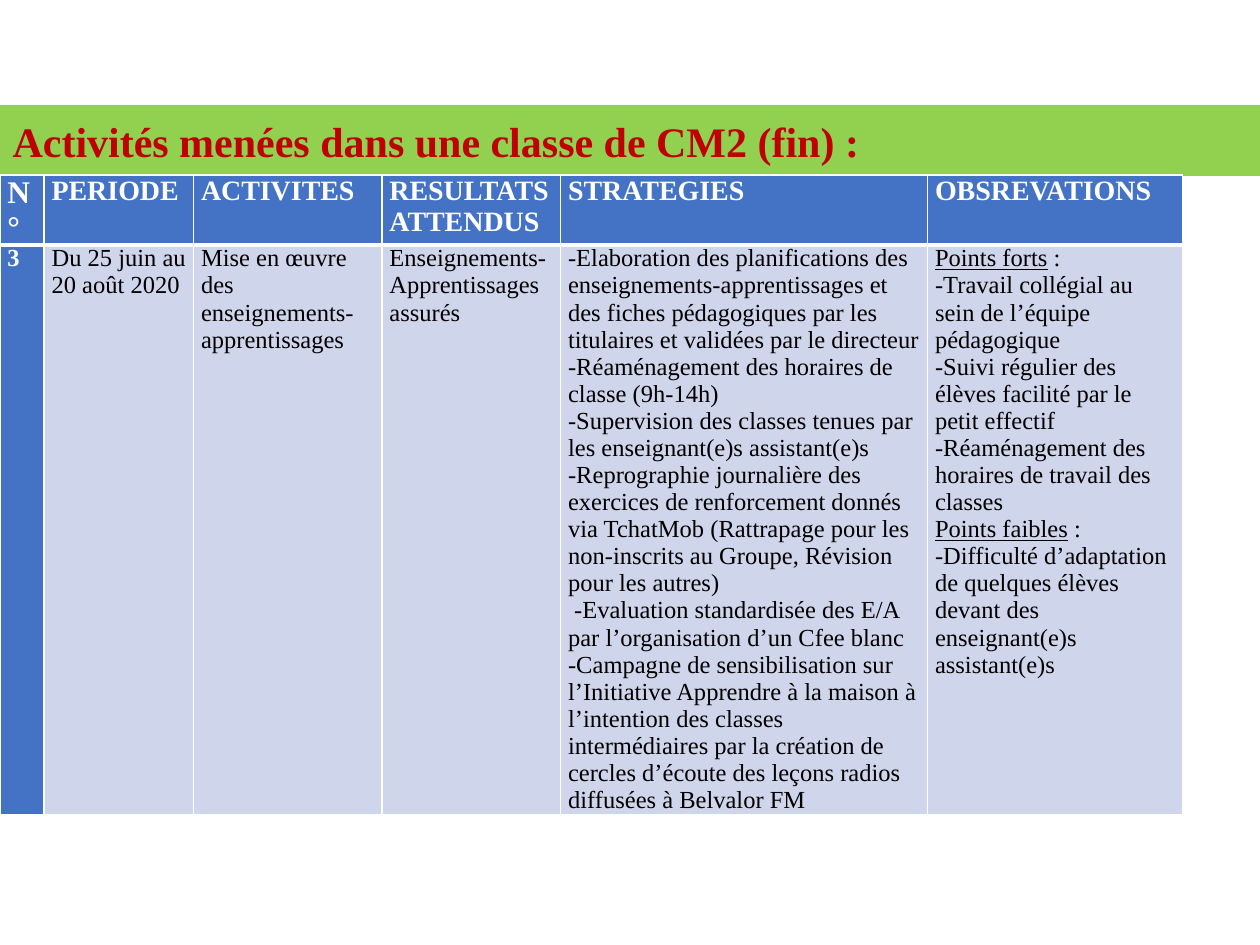
from lxml.etree import SubElement
from pptx import Presentation
from pptx.dml.color import RGBColor
from pptx.enum.text import MSO_ANCHOR, MSO_AUTO_SIZE, PP_ALIGN
from pptx.oxml.ns import qn
from pptx.util import Pt

FONT = "Times New Roman"
GREEN = RGBColor(0x92, 0xD0, 0x50)
RED = RGBColor(0xC0, 0x00, 0x00)
BLUE = RGBColor(0x44, 0x72, 0xC4)
PALE = RGBColor(0xCF, 0xD5, 0xEA)
WHITE = RGBColor(0xFF, 0xFF, 0xFF)
BLACK = RGBColor(0x00, 0x00, 0x00)

COLUMNS = [25.2, 85.4, 107.7, 102.1, 209.7, 145.7]
ROWS = [40, 325.5]
HEADERS = ["N°", "PERIODE", "ACTIVITES", "RESULTATS ATTENDUS", "STRATEGIES", "OBSREVATIONS"]
STRATEGIES = [
    "-Elaboration des planifications des enseignements-apprentissages et des fiches "
    "pédagogiques par les titulaires et validées par le directeur",
    "-Réaménagement des horaires de classe (9h-14h)",
    "-Supervision des classes tenues par les enseignant(e)s assistant(e)s",
    "-Reprographie journalière des exercices de renforcement donnés via TchatMob "
    "(Rattrapage pour les non-inscrits au Groupe, Révision pour les autres)",
    " -Evaluation standardisée des E/A par l’organisation d’un Cfee blanc",
    "-Campagne de sensibilisation sur l’Initiative Apprendre à la maison à l’intention "
    "des classes intermédiaires par la création de cercles d’écoute des leçons radios "
    "diffusées à Belvalor FM",
]
# A tuple holds an underlined label and the plain text after it.
OBSERVATIONS = [
    ("Points forts", " :"),
    "-Travail collégial au sein de l’équipe pédagogique",
    "-Suivi régulier des élèves facilité par le petit effectif",
    "-Réaménagement des horaires de travail des classes",
    ("Points faibles", " :"),
    "-Difficulté d’adaptation de quelques élèves devant des enseignant(e)s assistant(e)s",
]
ACTIVITY = [
    ["3"],
    ["Du 25 juin au 20 août 2020"],
    ["Mise en œuvre des enseignements-apprentissages"],
    ["Enseignements-Apprentissages assurés"],
    STRATEGIES,
    OBSERVATIONS,
]


def add_run(p, text, size, color, bold=False, underline=None):
    r = p.add_run()
    r.text = text
    r.font.name = FONT
    r.font.size = Pt(size)
    r.font.bold = bold
    r.font.underline = underline
    r.font.color.rgb = color


def add_title(s, left, top, width, height):
    sp = s.shapes.title
    sp.left, sp.top, sp.width, sp.height = Pt(left), Pt(top), Pt(width), Pt(height)
    sp.fill.solid()
    sp.fill.fore_color.rgb = GREEN
    sp.line.color.rgb = GREEN
    sp.line.width = Pt(1)
    tf = sp.text_frame
    tf.word_wrap = True
    tf.auto_size = MSO_AUTO_SIZE.NONE
    tf.vertical_anchor = MSO_ANCHOR.MIDDLE
    p = tf.paragraphs[0]
    p.alignment = PP_ALIGN.LEFT
    add_run(p, "Activités menées dans une classe de CM2 (fin) :", 24, RED, bold=True)


def set_borders(cell, top, bottom):
    tc_pr = cell._tc.get_or_add_tcPr()
    for side, width in (("L", 1), ("R", 1), ("T", top), ("B", bottom)):
        ln = SubElement(tc_pr, qn(f"a:ln{side}"), w=str(Pt(width)))
        fill = SubElement(ln, qn("a:solidFill"))
        SubElement(fill, qn("a:srgbClr"), val=str(WHITE))


def fill_cell(cell, paragraphs, size, heading, is_header):
    cell.margin_left = cell.margin_right = Pt(4.3)
    cell.margin_top = cell.margin_bottom = 0
    set_borders(cell, *((1, 3) if is_header else (3, 1)))
    cell.fill.solid()
    cell.fill.fore_color.rgb = BLUE if heading else PALE
    color = WHITE if heading else BLACK
    tf = cell.text_frame
    for i, content in enumerate(paragraphs):
        p = tf.add_paragraph() if i else tf.paragraphs[0]
        if isinstance(content, tuple):
            label, rest = content
            add_run(p, label, size, color, heading, underline=True)
            add_run(p, rest, size, color, heading)
        else:
            add_run(p, content, size, color, heading)


def add_activity_table(s, left, top):
    frame = s.shapes.add_table(len(ROWS), len(COLUMNS), Pt(left), Pt(top),
                               Pt(sum(COLUMNS)), Pt(sum(ROWS)))
    table = frame.table
    for column, width in zip(table.columns, COLUMNS):
        column.width = Pt(width)
    for row, height in zip(table.rows, ROWS):
        row.height = Pt(height)
    for i, (header, content) in enumerate(zip(HEADERS, ACTIVITY)):
        fill_cell(table.cell(0, i), [header], 16 if i else 18, True, True)
        fill_cell(table.cell(1, i), content, 14, i == 0, False)


def main():
    prs = Presentation()
    prs.slide_width, prs.slide_height = Pt(720), Pt(540)
    s = prs.slides.add_slide(prs.slide_layouts[5])
    add_title(s, 0, 60.3, 720, 39.7)
    add_activity_table(s, 0, 100)
    prs.save("out.pptx")


if __name__ == "__main__":
    main()
